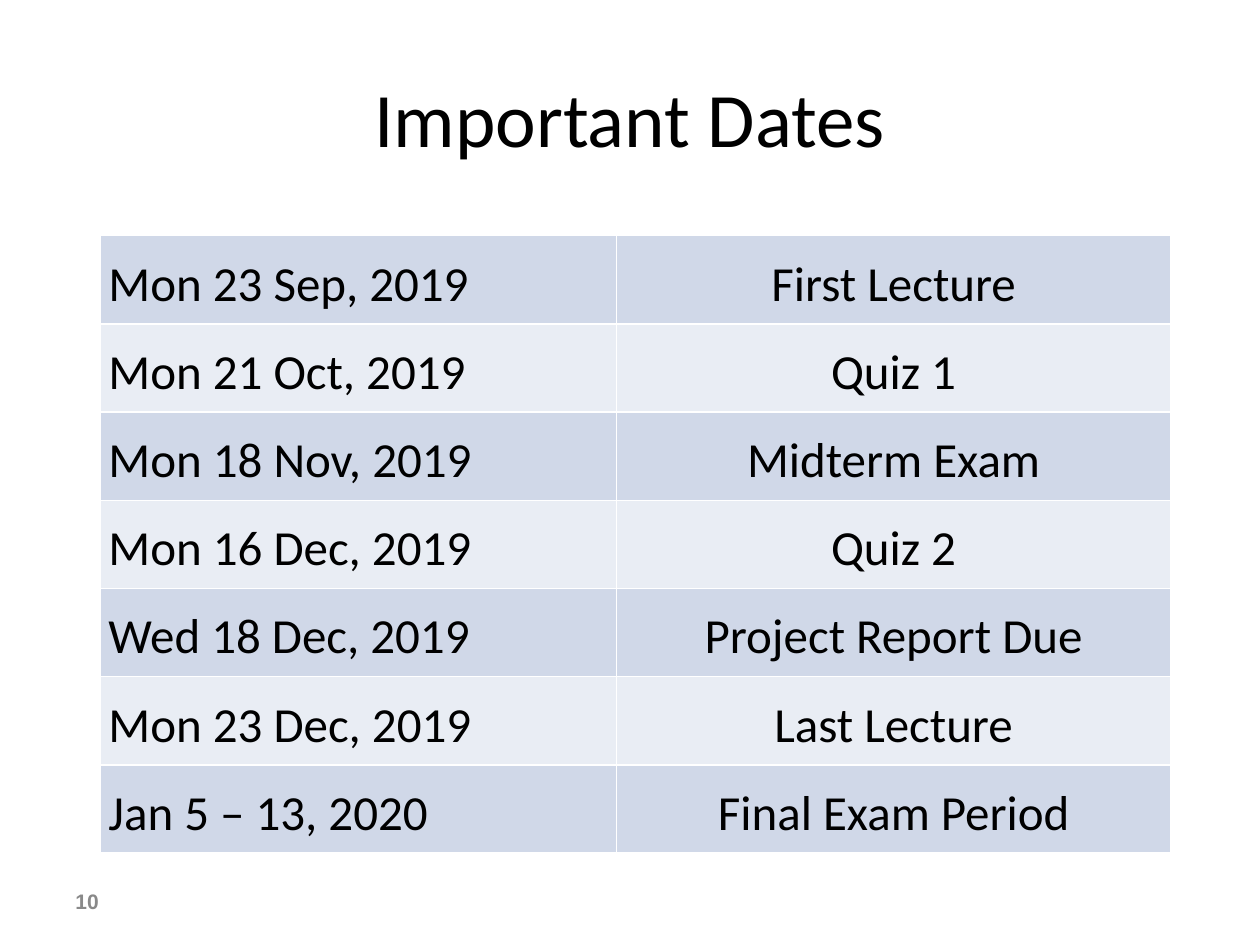
from typing import NamedTuple

from lxml.etree import SubElement
from pptx import Presentation
from pptx.dml.color import RGBColor
from pptx.enum.text import MSO_ANCHOR as Anchor, PP_ALIGN as Align
from pptx.oxml.ns import qn
from pptx.util import Pt

BLACK = RGBColor(0x00, 0x00, 0x00)
WHITE = RGBColor(0xFF, 0xFF, 0xFF)
GREY = RGBColor(0x89, 0x89, 0x89)
BANDS = (RGBColor(0xD0, 0xD8, 0xE8), RGBColor(0xE9, 0xED, 0xF4))

COL_WIDTHS = (295.2, 316.8)
ROW_HEIGHT = 50.4


class Event(NamedTuple):
    date: str
    name: str


class Box(NamedTuple):
    left: float
    top: float
    width: float
    height: float


EVENTS = (
    Event("Mon 23 Sep, 2019", "First Lecture"),
    Event("Mon 21 Oct, 2019", "Quiz 1"),
    Event("Mon 18 Nov, 2019", "Midterm Exam"),
    Event("Mon 16 Dec, 2019", "Quiz 2"),
    Event("Wed 18 Dec, 2019", "Project Report Due"),
    Event("Mon 23 Dec, 2019", "Last Lecture"),
    Event("Jan 5 – 13, 2020", "Final Exam Period"),
)

TITLE_FONT = {"name": "Calibri", "size": Pt(44), "bold": False}
CELL_FONT = {"name": "Calibri", "size": Pt(28), "bold": False}
NUMBER_FONT = {"name": "Arial", "size": Pt(12), "bold": True}
CELL_FORMAT = {
    "margin_left": Pt(5), "margin_right": Pt(5),
    "margin_top": Pt(0), "margin_bottom": Pt(0),
    "vertical_anchor": Anchor.MIDDLE,
}


def set_all(target, values: dict) -> None:
    for key, value in values.items():
        setattr(target, key, value)


def write(tf, text: str, font: dict, color: RGBColor, align: Align):
    """Put one formatted run in the first paragraph and return that paragraph."""
    p = tf.paragraphs[0]
    p.alignment = align
    r = p.add_run()
    r.text = text
    set_all(r.font, font)
    r.font.color.rgb = color
    return p


def add_text(s, box: Box, text: str, font: dict, color: RGBColor, align: Align) -> None:
    tf = s.shapes.add_textbox(*map(Pt, box)).text_frame
    set_all(tf, {"word_wrap": True, "vertical_anchor": Anchor.MIDDLE})
    write(tf, text, font, color, align)


def add_borders(cell, color: RGBColor, width: float) -> None:
    tc_pr = cell._tc.get_or_add_tcPr()
    for side in ("a:lnL", "a:lnR", "a:lnT", "a:lnB"):
        ln = SubElement(tc_pr, qn(side), w=str(Pt(width)))
        SubElement(SubElement(ln, qn("a:solidFill")), qn("a:srgbClr"), val=str(color))


def add_schedule(s, left: float, top: float) -> None:
    box = Box(left, top, sum(COL_WIDTHS), ROW_HEIGHT * len(EVENTS))
    table = s.shapes.add_table(len(EVENTS), len(COL_WIDTHS), *map(Pt, box)).table
    table.first_row = False
    for column, width in zip(table.columns, COL_WIDTHS):
        column.width = Pt(width)
    for i, event in enumerate(EVENTS):
        table.rows[i].height = Pt(ROW_HEIGHT)
        for j, (text, align) in enumerate(zip(event, (Align.LEFT, Align.CENTER))):
            cell = table.cell(i, j)
            set_all(cell, CELL_FORMAT)
            add_borders(cell, WHITE, 1)
            cell.fill.solid()
            cell.fill.fore_color.rgb = BANDS[i % 2]
            p = write(cell.text_frame, text, CELL_FONT, BLACK, align)
            p.line_spacing = 1.15


def main() -> None:
    prs = Presentation()
    set_all(prs, {"slide_width": Pt(720), "slide_height": Pt(540)})
    s = prs.slides.add_slide(prs.slide_layouts[6])
    add_text(s, Box(36, 21.6, 648, 90), "Important Dates", TITLE_FONT, BLACK, Align.CENTER)
    add_schedule(s, 57, 134.7)
    add_text(s, Box(36, 500.4, 168, 28.8), "10", NUMBER_FONT, GREY, Align.LEFT)
    prs.save("out.pptx")


if __name__ == "__main__":
    main()
